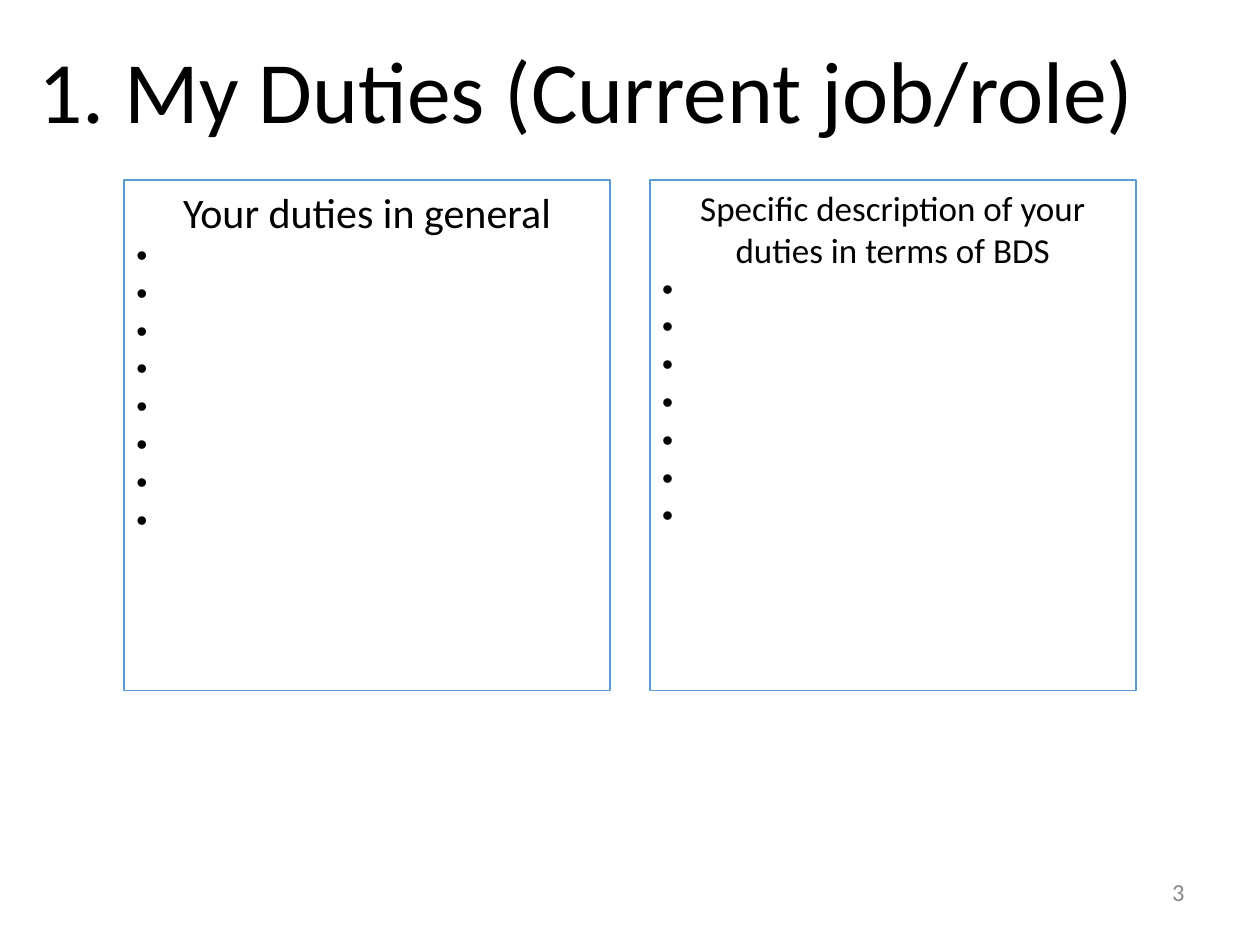
from lxml.etree import SubElement as Sub
from pptx import Presentation
from pptx.dml.color import RGBColor as RGB
from pptx.enum.shapes import MSO_SHAPE as Shape
from pptx.enum.text import MSO_ANCHOR as Anchor, PP_ALIGN as Align
from pptx.oxml.ns import qn
from pptx.util import Cm, Pt

BLACK = RGB(0x00, 0x00, 0x00)
WHITE = RGB(0xFF, 0xFF, 0xFF)
BLUE = RGB(0x5B, 0x9B, 0xD5)
GRAY = RGB(0x89, 0x89, 0x89)
FONT = "Calibri"
BLANK = "　"


def style(para, size, color=BLACK, align=Align.LEFT):
    para.alignment = align
    for run in para.runs:
        run.font.name = FONT
        run.font.size = Pt(size)
        run.font.color.rgb = color


def bullet(para):
    props = para._p.get_or_add_pPr()
    props.set("marL", str(Cm(0.79)))
    props.set("indent", str(-Cm(0.79)))
    Sub(props, qn("a:buFont"), typeface="Arial")
    Sub(props, qn("a:buChar"), char="•")


def label(slide, text, box, size, color, align):
    frame = slide.shapes.add_textbox(*map(Cm, box)).text_frame
    frame.word_wrap = True
    frame.vertical_anchor = Anchor.MIDDLE
    frame.text = text
    style(frame.paragraphs[0], size, color, align)
    return frame


def panel(slide, left, head, size, count):
    rect = slide.shapes.add_shape(
        Shape.RECTANGLE, Cm(left), Cm(3.63), Cm(9.8), Cm(10.29))
    rect.shadow.inherit = False
    rect.fill.solid()
    rect.fill.fore_color.rgb = WHITE
    rect.line.color.rgb = BLUE
    rect.line.width = Pt(1)
    frame = rect.text_frame
    frame.word_wrap = True
    frame.vertical_anchor = Anchor.TOP
    frame.text = head
    style(frame.paragraphs[0], size, align=Align.CENTER)
    for _ in range(count):
        para = frame.add_paragraph()
        para.text = BLANK
        style(para, 18)
        bullet(para)


def main():
    deck = Presentation()
    deck.slide_width, deck.slide_height = Cm(25.4), Cm(19.05)
    slide = deck.slides.add_slide(deck.slide_layouts[6])
    title = label(slide, "1. My Duties (Current job/role)",
                  (0.53, 0.64, 24.87, 2.54), 50, BLACK, Align.LEFT)
    title.paragraphs[0].line_spacing = 0.9
    panel(slide, 13.1, "Specific description of your duties in terms of BDS",
          20, 7)
    panel(slide, 2.5, "Your duties in general", 24, 8)
    label(slide, "3", (18.21, 17.35, 5.92, 1.27), 14, GRAY, Align.RIGHT)
    deck.save("out.pptx")


if __name__ == "__main__":
    main()
